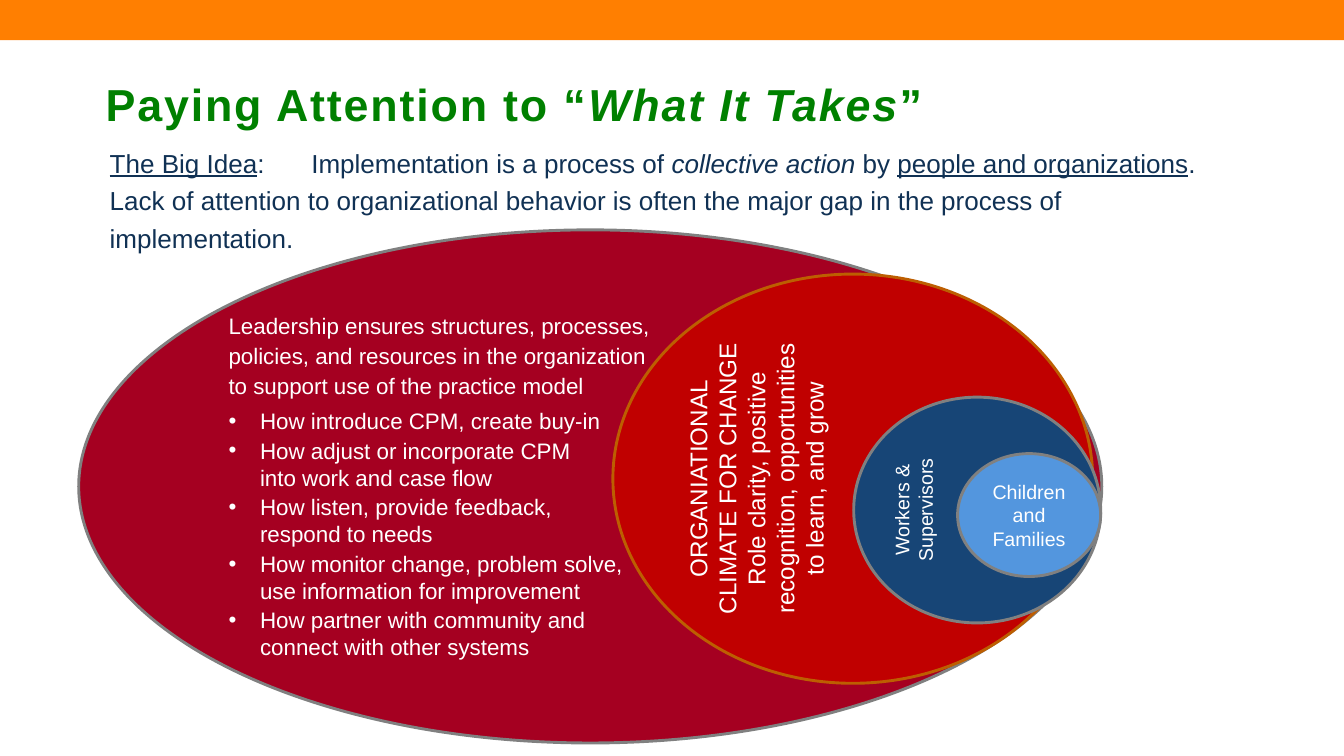
"""Build the slide on what implementation takes, with nested ellipses."""
from lxml.etree import SubElement as Sub
from pptx import Presentation
from pptx.dml.color import RGBColor as Rgb
from pptx.enum.shapes import MSO_SHAPE as Kind
from pptx.enum.text import MSO_ANCHOR as Anchor, PP_ALIGN as Align
from pptx.oxml.ns import qn
from pptx.util import Pt

COLORS = {
    "bar": "FF7F01", "title": "008000", "body": "103154", "white": "FFFFFF",
    "lead": "A50021", "climate": "C00000", "rust": "BD5E01",
    "staff": "174576", "child": "5396DE", "gray": "808080",
}
HANG = 22.5


class Deck:
    """Hold the style and the current slide."""

    def __init__(self, font):
        self.font = font
        self.prs = Presentation()
        self.prs.slide_width, self.prs.slide_height = Pt(960), Pt(540)
        self.slide = self.prs.slides.add_slide(self.prs.slide_layouts[6])

    def color(self, name):
        return Rgb.from_string(COLORS[name])

    def put(self, item, values):
        for key, val in values.items():
            setattr(item, key, val)

    def shape(self, kind, box, fill, line=None):
        form = self.slide.shapes.add_shape(kind, *map(Pt, box))
        form.shadow.inherit = False
        form.fill.solid()
        form.fill.fore_color.rgb = self.color(fill)
        if line:
            form.line.color.rgb = self.color(line)
            form.line.width = Pt(2.08)
        else:
            form.line.fill.background()
        return form

    def frame(self, form, anchor, left=7.2, right=7.2, turn=False, wrap=True):
        text = form.text_frame
        self.put(text, {
            "word_wrap": wrap, "vertical_anchor": anchor,
            "margin_left": Pt(left), "margin_right": Pt(right),
            "margin_top": Pt(3.6), "margin_bottom": Pt(3.6),
        })
        if turn:
            text._txBody.bodyPr.set("vert", "vert270")
        return text

    def box(self, box, anchor):
        return self.frame(self.slide.shapes.add_textbox(*map(Pt, box)), anchor)

    def para(self, text, runs, size, color, first=False, **form):
        para = text.paragraphs[0] if first else text.add_paragraph()
        self.put(para, {"alignment": Align.LEFT, **form})
        for words, style in runs:
            for num, part in enumerate(words.split("\n")):
                if num:
                    para.add_line_break()
                run = para.add_run()
                run.text = part
                self.put(run.font,
                         {"name": self.font, "size": Pt(size), **style})
                run.font.color.rgb = self.color(color)
        return para

    def lines(self, text, rows, size):
        for num, row in enumerate(rows):
            self.para(text, [(row, {})], size, "white", num == 0,
                      alignment=Align.CENTER)

    def indent(self, para, mark):
        props = para._p.get_or_add_pPr()
        props.set("marL", str(Pt(HANG)))
        props.set("indent", str(Pt(-HANG if mark else 0)))
        if mark:
            Sub(props, qn("a:buFont"), typeface=self.font)
            Sub(props, qn("a:buChar"), char="•")
        else:
            Sub(props, qn("a:buNone"))

    def tab(self, para, place):
        tabs = Sub(para._p.get_or_add_pPr(), qn("a:tabLst"))
        Sub(tabs, qn("a:tab"), pos=str(Pt(place)), algn="l")


def main():
    deck = Deck("Arial")
    deck.shape(Kind.RECTANGLE, (0, 0, 960, 28.8), "bar")

    title = deck.box((68.4, 56.9, 614.9, 33.8), Anchor.MIDDLE)
    bold, slant = {"bold": True}, {"bold": True, "italic": True}
    para = deck.para(title, [("Paying Attention to “", bold),
                             ("What It Takes", slant), ("”", bold)],
                     32, "title", True)
    for run in para.runs:
        run.font._element.set("spc", "130")

    body = deck.box((71.3, 97.2, 829.4, 107.3), Anchor.TOP)
    under = {"underline": True}
    para = deck.para(body, [
        ("The Big Idea", under),
        (":\tImplementation is a process of ", {}),
        ("collective action ", {"italic": True}),
        ("by ", {}),
        ("people and organizations", under),
        (". Lack of attention to organizational behavior is often the major "
         "gap in the process of implementation.", {}),
    ], 18.6, "body", True, line_spacing=1.2)
    deck.tab(para, 144)

    lead = deck.frame(deck.shape(Kind.OVAL, (56.2, 164.2, 730.8, 366.5),
                                 "lead", "gray"), Anchor.MIDDLE, left=0)
    intro = [("Leadership ensures structures, processes,", 2),
             ("policies, and resources in the organization", 2),
             ("to support use of the practice model", 6)]
    for num, (words, gap) in enumerate(intro):
        deck.para(lead, [(words, {})], 16, "white", num == 0,
                  space_after=Pt(gap))
    points = [
        ["How introduce CPM, create buy-in"],
        ["How adjust or incorporate CPM", "into work and case flow"],
        ["How listen, provide feedback,", "respond to needs"],
        ["How monitor change, problem solve,", "use information for improvement"],
        ["How partner with community and", "connect with other systems"],
    ]
    for point in points:
        for words in point:
            last = words == point[-1] and point != points[-1]
            para = deck.para(lead, [(words, {})], 16, "white",
                             space_after=Pt(2 if last else 0))
            deck.indent(para, words == point[0])

    climate = deck.shape(Kind.OVAL, (437.8, 195.8, 342.7, 292.3),
                         "climate", "rust")
    deck.lines(deck.frame(climate, Anchor.TOP, 0, 0, True, False), [
        "ORGANIATIONAL\nCLIMATE FOR CHANGE",
        "Role clarity, positive\nrecognition, opportunities\nto learn, and grow",
    ], 17.3)

    staff = deck.shape(Kind.OVAL, (609.8, 283.7, 176.4, 161.3), "staff", "gray")
    deck.lines(deck.frame(staff, Anchor.TOP, 0, turn=True),
               ["Workers &", "Supervisors"], 14)

    child = deck.shape(Kind.OVAL, (684, 324, 102.2, 87.8), "child", "gray")
    deck.lines(deck.frame(child, Anchor.MIDDLE), ["Children and Families"], 14)

    deck.prs.save("out.pptx")


if __name__ == "__main__":
    main()
